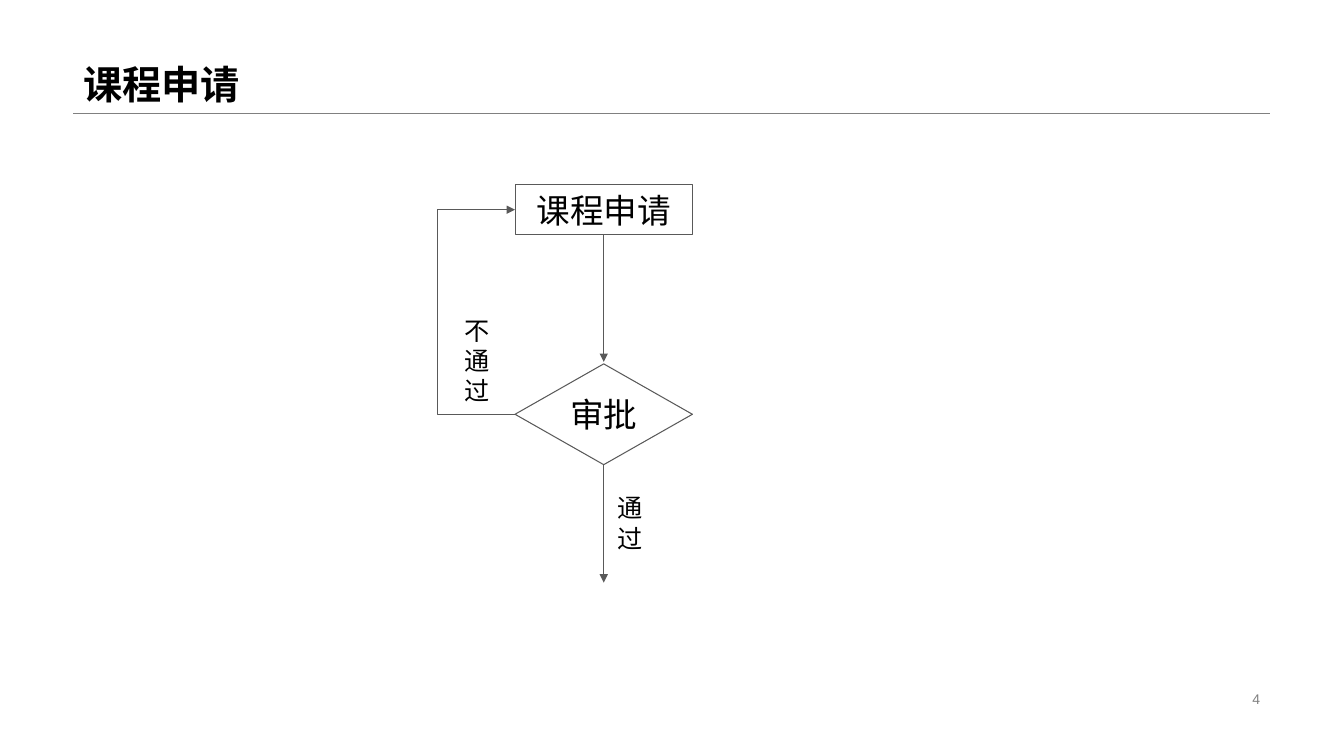
from dataclasses import dataclass

from lxml.etree import SubElement
from pptx import Presentation
from pptx.dml.color import RGBColor
from pptx.enum.shapes import MSO_CONNECTOR as Connector, MSO_SHAPE as Shape
from pptx.enum.text import MSO_ANCHOR as Anchor, MSO_AUTO_SIZE as AutoSize, PP_ALIGN as Align
from pptx.oxml.ns import qn
from pptx.util import Cm, Pt


@dataclass(frozen=True)
class Theme:
    font: str = "Arial"
    ink: RGBColor = RGBColor(0x00, 0x00, 0x00)
    outline: RGBColor = RGBColor(0x59, 0x59, 0x59)
    muted: RGBColor = RGBColor(0x80, 0x80, 0x80)
    title: Pt = Pt(28)
    step: Pt = Pt(24)
    label: Pt = Pt(18)
    number: Pt = Pt(10)


theme = Theme()


def write(shape, text, size, color=theme.ink, bold=False, align=Align.LEFT,
          anchor=Anchor.TOP, wrap=True, spacing=1.0):
    frame = shape.text_frame
    frame.word_wrap = wrap
    frame.auto_size = AutoSize.NONE
    frame.vertical_anchor = anchor
    frame.text = text
    paragraph = frame.paragraphs[0]
    paragraph.alignment = align
    paragraph.line_spacing = spacing
    paragraph.font.name = theme.font
    paragraph.font.size = size
    paragraph.font.bold = bold
    paragraph.font.color.rgb = color


def connect(kind, start, end, color=theme.outline, width=0.5, arrow=True):
    connector = slide.shapes.add_connector(kind, *map(Cm, start + end))
    connector.line.color.rgb = color
    connector.line.width = Pt(width)
    if arrow:
        SubElement(connector.line._get_or_add_ln(), qn("a:tailEnd"), type="triangle")
    SubElement(connector._element.spPr, qn("a:effectLst"))
    return connector


presentation = Presentation()
presentation.slide_width = Cm(33.87)
presentation.slide_height = Cm(19.05)
slide = presentation.slides.add_slide(presentation.slide_layouts[5])

margin, rule_y, content_width = 1.85, 2.84, 30.15
connect(Connector.STRAIGHT, (margin, rule_y), (margin + content_width, rule_y),
        color=theme.muted, width=0.25, arrow=False)

title = slide.shapes.title
title.left, title.top = Cm(margin), Cm(0)
title.width, title.height = Cm(content_width), Cm(rule_y)
write(title, "课程申请", theme.title, bold=True, anchor=Anchor.BOTTOM, spacing=0.9)

number = slide.shapes.add_textbox(Cm(23.93), Cm(17.32), Cm(8.08), Cm(0.58))
write(number, "4", theme.number, color=theme.muted, align=Align.RIGHT, anchor=Anchor.MIDDLE)

step_left, step_width = 12.98, 4.47
request_top, request_height = 4.65, 1.27
review_top, review_height = 9.17, 2.54
steps = [
    (Shape.RECTANGLE, "课程申请", request_top, request_height),
    (Shape.DIAMOND, "审批", review_top, review_height),
]
for kind, text, top, height in steps:
    step = slide.shapes.add_shape(kind, Cm(step_left), Cm(top), Cm(step_width), Cm(height))
    step.shadow.inherit = False
    step.fill.background()
    step.line.color.rgb = theme.outline
    step.line.width = Pt(0.75)
    write(step, text, theme.step, align=Align.CENTER, anchor=Anchor.MIDDLE, wrap=False)

center_x = step_left + step_width / 2
request_bottom = request_top + request_height
review_bottom = review_top + review_height
for start_y, end_y in [(request_bottom, 9.12), (review_bottom, 14.68)]:
    connect(Connector.STRAIGHT, (center_x, start_y), (center_x, end_y))

loop_offset, loop_reach = 0.03, 1.98
loop = connect(Connector.ELBOW,
               (step_left + loop_offset, review_top + review_height / 2),
               (step_left, request_top + request_height / 2))
bend = round(loop_reach / loop_offset * 100000)
adjustments = loop._element.spPr.find(qn("a:prstGeom")).get_or_add_avLst()
SubElement(adjustments, qn("a:gd"), name="adj1", fmla=f"val {bend}")

for text, left, top, height in [("不通过", 11.46, 7.82, 2.57), ("通过", 15.32, 12.29, 1.8)]:
    label = slide.shapes.add_textbox(Cm(left), Cm(top), Cm(1.57), Cm(height))
    write(label, text, theme.label)

presentation.save("out.pptx")
